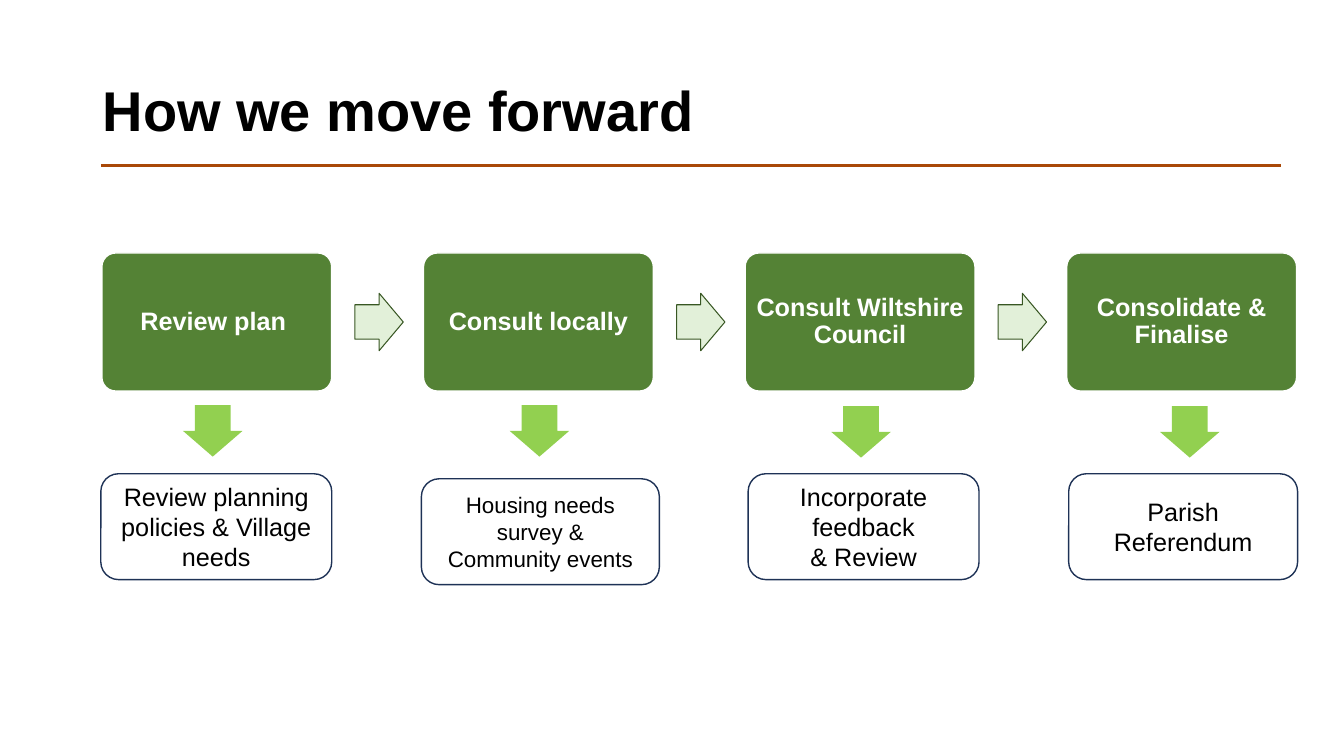
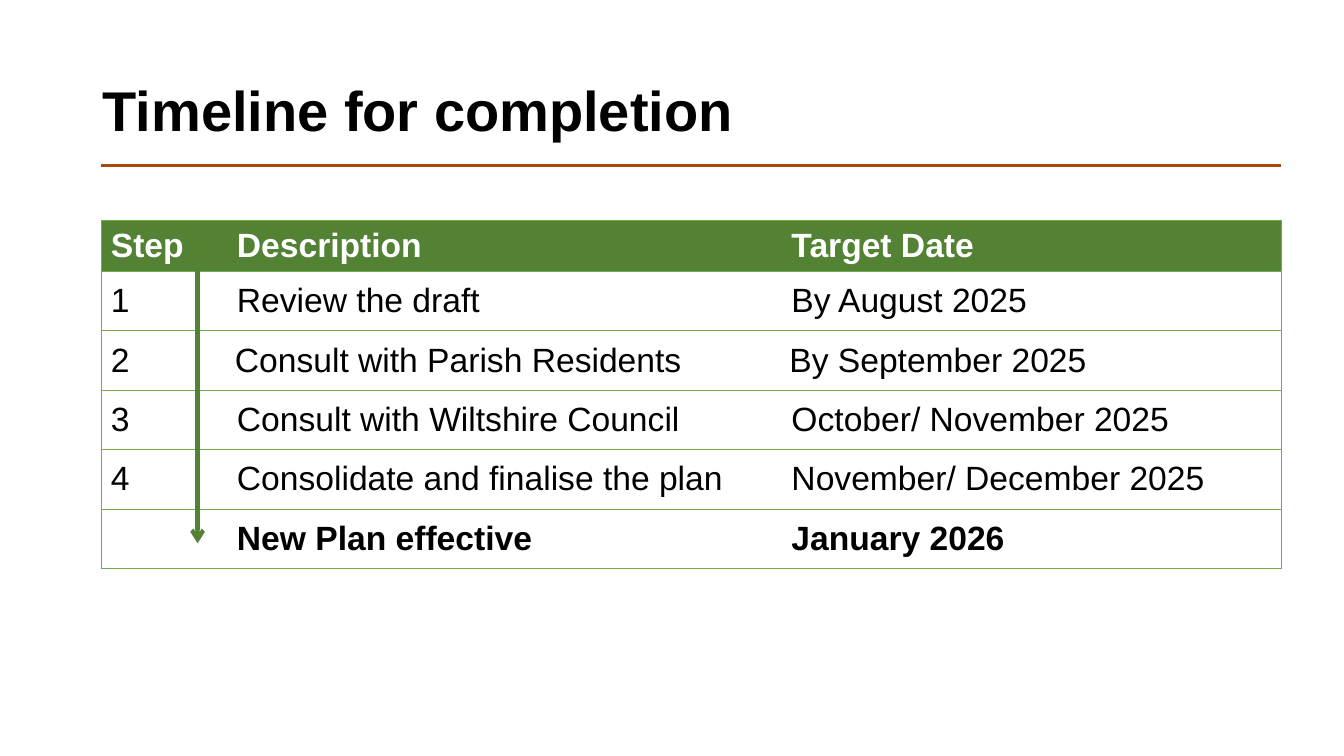
from lxml import etree
from pptx import Presentation
from pptx.dml.color import RGBColor
from pptx.enum.shapes import MSO_CONNECTOR as Conn, MSO_SHAPE as Shape
from pptx.enum.text import MSO_ANCHOR as Anchor, PP_ALIGN as Align
from pptx.oxml.ns import qn
from pptx.util import Inches, Pt

FONT = "Arial"
BLACK = RGBColor(0x00, 0x00, 0x00)
WHITE = RGBColor(0xFF, 0xFF, 0xFF)
GREEN = RGBColor(0x54, 0x82, 0x35)
PALE = RGBColor(0xE2, 0xF0, 0xD9)
DARK = RGBColor(0x38, 0x57, 0x23)
LIME = RGBColor(0x92, 0xD0, 0x50)
GRID = RGBColor(0x70, 0xAD, 0x47)
NAVY = RGBColor(0x1E, 0x32, 0x56)
RUST = RGBColor(0xA9, 0x48, 0x07)

LEFT, WIDTH = 1, 11.71
PITCH = 3.19

# step, centre and top of the down arrow, outcome box, outcome size, outcome lines
STEPS = [
    ("Review plan ", (2.11, 4.02), (1, 4.7, 2.29, 1.05), 18,
     ["Review planning policies & Village needs"]),
    ("Consult locally", (5.35, 4.02), (4.18, 4.75, 2.36, 1.05), 16,
     ["Housing needs survey &", "Community events"]),
    ("Consult Wiltshire Council", (8.54, 4.03), (7.42, 4.7, 2.29, 1.05), 18,
     ["Incorporate feedback", "& Review"]),
    ("Consolidate & Finalise", (11.8, 4.03), (10.6, 4.7, 2.27, 1.05), 18,
     ["Parish Referendum"]),
]

ROWS = [
    ("Step", "Description", "Target Date"),
    ("1", "Review the draft", "By August 2025"),
    ("2", "Consult with Parish Residents", "By September 2025"),
    ("3", "Consult with Wiltshire Council", "October/ November 2025"),
    ("4", "Consolidate and finalise the plan", "November/ December 2025"),
    ("", "New Plan effective", "January 2026"),
]
COLS = [1.25, 5.5, 4.96]
HEAD, BODY = 0.41, 0.59


def write(frame, lines, size, color=BLACK, bold=False, align=Align.LEFT, space=None):
    frame.word_wrap = True
    for i, line in enumerate(lines):
        para = frame.add_paragraph() if i else frame.paragraphs[0]
        para.alignment = align
        if space:
            para.line_spacing = space
        run = para.add_run()
        run.text = line
        font = run.font
        font.name, font.size, font.bold = FONT, Pt(size), bold
        font.color.rgb = color


def add_box(slide, kind, box, fill=None, line=None, width=1, adjust=()):
    box = slide.shapes.add_shape(kind, *map(Inches, box))
    box.shadow.inherit = False
    for i, value in enumerate(adjust):
        box.adjustments[i] = value
    if fill is None:
        box.fill.background()
    else:
        box.fill.solid()
        box.fill.fore_color.rgb = fill
    if line is None:
        box.line.fill.background()
    else:
        box.line.color.rgb = line
        box.line.width = Pt(width)
    box.text_frame.vertical_anchor = Anchor.MIDDLE
    return box


def add_line(slide, start, end, color, width, arrow=False):
    line = slide.shapes.add_connector(Conn.STRAIGHT, *map(Inches, start + end))
    line.line.color.rgb = color
    line.line.width = Pt(width)
    if arrow:
        etree.SubElement(line.line._get_or_add_ln(), qn("a:tailEnd"), type="arrow")
    etree.SubElement(line._element.spPr, qn("a:effectLst"))


def add_page(deck, title):
    slide = deck.slides.add_slide(deck.slide_layouts[6])
    box = slide.shapes.add_textbox(*map(Inches, (0.92, 0.4, 11.5, 1.45)))
    box.text_frame.vertical_anchor = Anchor.MIDDLE
    write(box.text_frame, [title], 40, bold=True, space=0.9)
    add_line(slide, (LEFT, 1.64), (LEFT + WIDTH, 1.64), RUST, 2.25)
    return slide


def add_step(slide, left, top, text, last):
    """A green step, followed by an arrow unless it is the last."""
    box = add_box(slide, Shape.ROUNDED_RECTANGLE, (left, top, 2.28, 1.37),
                  GREEN, WHITE, adjust=[0.1])
    frame = box.text_frame
    frame.margin_left = frame.margin_right = Inches(0.06)
    write(frame, [text], 18, WHITE, True, Align.CENTER, 0.9)
    if not last:
        add_box(slide, Shape.RIGHT_ARROW, (left + 2.51, top + 0.4, 0.48, 0.57),
                PALE, DARK, 0.75, [0.6, 0.5])


def add_result(slide, arrow, box, size, lines):
    """A down arrow and the outlined outcome below it."""
    mid, top = arrow
    add_box(slide, Shape.DOWN_ARROW, (mid - 0.59 / 2, top, 0.59, 0.51),
            LIME, adjust=[0.6, 0.5])
    shape = add_box(slide, Shape.ROUNDED_RECTANGLE, box, line=NAVY)
    write(shape.text_frame, lines, size, align=Align.CENTER)


def add_edge(cell, side, shown):
    edge = etree.SubElement(cell._tc.get_or_add_tcPr(), qn("a:ln" + side),
                            w=str(Pt(0.5)))
    if shown:
        fill = etree.SubElement(edge, qn("a:solidFill"))
        etree.SubElement(fill, qn("a:srgbClr"), val=str(GRID))
    else:
        etree.SubElement(edge, qn("a:noFill"))


def add_dates(slide, left, top):
    high = HEAD + BODY * (len(ROWS) - 1)
    table = slide.shapes.add_table(
        len(ROWS), len(COLS), *map(Inches, (left, top, sum(COLS), high))).table
    table.first_row = table.horz_banding = False
    for col, width in zip(table.columns, COLS):
        col.width = Inches(width)
    for r, texts in enumerate(ROWS):
        head, final = r == 0, r == len(ROWS) - 1
        table.rows[r].height = Inches(HEAD if head else BODY)
        for c, text in enumerate(texts):
            cell = table.cell(r, c)
            cell.vertical_anchor = Anchor.MIDDLE
            if r == 2 and c:
                cell.margin_left = cell.margin_right = Inches(0.08)
            add_edge(cell, "L", c == 0)
            add_edge(cell, "R", c == len(COLS) - 1)
            add_edge(cell, "T", True)
            add_edge(cell, "B", True)
            if head:
                cell.fill.solid()
                cell.fill.fore_color.rgb = GREEN
            else:
                cell.fill.background()
            if text:
                write(cell.text_frame, [text], 24, WHITE if head else BLACK,
                      head or final)
    add_line(slide, (left + 0.96, top + 0.5), (left + 0.96, top + 3.2),
             GREEN, 3, True)


def main():
    deck = Presentation()
    deck.slide_width, deck.slide_height = Inches(13.33), Inches(7.5)

    flow = add_page(deck, "How we move forward")
    for i, (text, arrow, box, size, lines) in enumerate(STEPS):
        add_step(flow, LEFT + 0.01 + i * PITCH, 2.51, text, i == len(STEPS) - 1)
        add_result(flow, arrow, box, size, lines)

    plan = add_page(deck, "Timeline for completion")
    add_dates(plan, LEFT, 2.19)

    deck.save("out.pptx")


if __name__ == "__main__":
    main()
